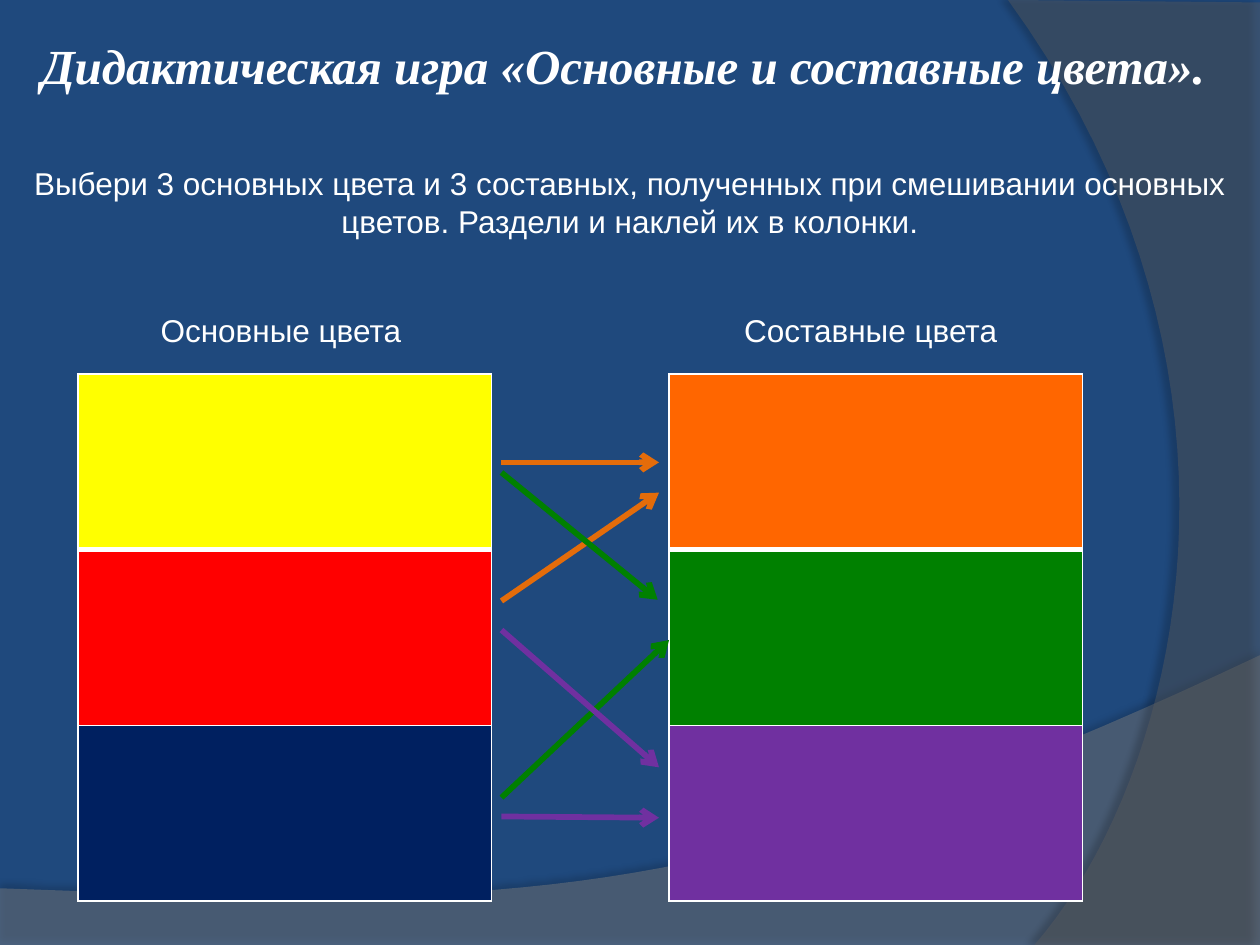
import pptx
import pptx.util
import pptx.dml.color
import pptx.enum.shapes
import pptx.enum.text
import pptx.oxml
import pptx.oxml.ns

NS = pptx.oxml.ns.nsdecls("a")
WHITE, ORANGE, GREEN, PURPLE = "FFFFFF", "E46C0A", "008000", "7030A0"
ALIGN = pptx.enum.text.PP_ALIGN

deck = pptx.Presentation()
deck.slide_width = pptx.util.Inches(10)
deck.slide_height = pptx.util.Inches(7.5)
slide = deck.slides.add_slide(deck.slide_layouts[6])

# Grid of 100 columns by 75 rows, with square cells
UNIT = deck.slide_width // 100


def colour(fmt, code):
    """Give a fill a solid colour."""
    fmt.solid()
    fmt.fore_color.rgb = pptx.dml.color.RGBColor.from_string(code)


def write(text, left, top, width, height, size=18, font="Arial", align=ALIGN.CENTER):
    """Place white text on the grid and return its frame."""
    box = slide.shapes.add_textbox(*(round(n * UNIT) for n in (left, top, width, height)))
    frame = box.text_frame
    frame.word_wrap = True
    line = frame.paragraphs[0]
    line.text = text
    line.alignment = align
    line.font.size = pptx.util.Pt(size)
    line.font.name = font
    colour(line.font.fill, WHITE)
    return frame


# Background with two translucent waves:
# straight corners, curve controls, fill, opacity, shadow opacity, distance, angle
colour(slide.background.fill, "1F497D")
waves = [
    ([(0, 70.5), (0, 75.1), (100, 75.1), (100, 52)],
     [(55.9, 72.9), (39.1, 71.9), (0, 70.5)], "7F7F7F", 45, 35, 3.5, 270),
    ([(100, 0.2), (100, 75), (82.1, 75)],
     [(93.5, 61.9), (101.8, 30), (80, 0)], "5E5E5E", 40, 45, 4, 180),
]
STEPS = 40
for corners, controls, fill, opacity, shade, distance, angle in waves:
    bezier = [corners[-1]] + controls
    curve = []
    for step in range(1, STEPS + 1):
        t = step / STEPS
        weights = ((1 - t) ** 3, 3 * t * (1 - t) ** 2, 3 * t * t * (1 - t), t ** 3)
        curve.append(tuple(sum(w * p[axis] for w, p in zip(weights, bezier))
                           for axis in (0, 1)))
    outline = [(round(x * UNIT), round(y * UNIT)) for x, y in corners + curve]
    builder = slide.shapes.build_freeform(*outline[0])
    builder.add_line_segments(outline[1:], close=True)
    wave = builder.convert_to_shape()
    wave.line.fill.background()
    colour(wave.fill, fill)
    wave.shadow.inherit = False
    props = wave.element.spPr
    props.find(".//" + pptx.oxml.ns.qn("a:srgbClr")).append(
        pptx.oxml.parse_xml(f'<a:alpha {NS} val="{opacity * 1000}"/>'))
    props.find(pptx.oxml.ns.qn("a:effectLst")).append(pptx.oxml.parse_xml(
        f'<a:outerShdw {NS} blurRad="{pptx.util.Pt(4)}" dist="{pptx.util.Pt(distance)}" '
        f'dir="{angle * 60000}" algn="ctr" rotWithShape="0"><a:srgbClr val="000000">'
        f'<a:alpha val="{shade * 1000}"/></a:srgbClr></a:outerShdw>'))

# Title and task
title = write("Дидактическая игра «Основные и составные цвета».",
              2.3, 2.3, 95.4, 5.7, 28, "Times New Roman", ALIGN.JUSTIFY)
title.word_wrap = False
title.vertical_anchor = pptx.enum.text.MSO_ANCHOR.MIDDLE
title.paragraphs[0].font.bold = True
title.paragraphs[0].font.italic = True
write("Выбери 3 основных цвета и 3 составных, полученных при смешивании основных "
      "цветов. Раздели и наклей их в колонки.", 0, 12.5, 100, 7.1)

# Two colour columns with their headings
columns = [
    ("Основные цвета", 5.5, 6.2, ("FFFF00", "FF0000", "002060")),
    ("Составные цвета", 52.3, 53.1, ("FF6600", GREEN, PURPLE)),
]
for heading, heading_left, left, swatches in columns:
    write(heading, heading_left, 24.2, 33.6, 4)
    table = slide.shapes.add_table(
        3, 1, *(round(n * UNIT) for n in (left, 29.7, 32.8, 41.8))).table
    for row, swatch in enumerate(swatches):
        cell = table.cell(row, 0)
        widths = {"L": 1, "R": 1, "T": 3 if row == 1 else 1, "B": 3 if row == 0 else 1}
        for side, width in widths.items():
            cell._tc.get_or_add_tcPr().append(pptx.oxml.parse_xml(
                f'<a:ln{side} {NS} w="{pptx.util.Pt(width)}"><a:solidFill>'
                f'<a:srgbClr val="{WHITE}"/></a:solidFill></a:ln{side}>'))
        colour(cell.fill, swatch)

# Mixing arrows: start row, end column, end row
ARROW_START = 39.8
arrows = [
    (ORANGE, 36.7, 52.3, 36.7),
    (ORANGE, 47.7, 52.3, 39.1),
    (GREEN, 37.5, 52.2, 47.6),
    (GREEN, 63.3, 53.1, 50.8),
    (PURPLE, 50, 52.3, 60.9),
    (PURPLE, 64.8, 52.3, 64.9),
]
for mix, start_row, end_column, end_row in arrows:
    arrow = slide.shapes.add_connector(
        pptx.enum.shapes.MSO_CONNECTOR.STRAIGHT,
        *(round(n * UNIT) for n in (ARROW_START, start_row, end_column, end_row)))
    colour(arrow.line.fill, mix)
    arrow.line.width = pptx.util.Pt(3.25)
    arrow.line._get_or_add_ln().append(
        pptx.oxml.parse_xml(f'<a:tailEnd {NS} type="arrow"/>'))
    arrow.element.spPr.append(pptx.oxml.parse_xml(f"<a:effectLst {NS}/>"))

deck.save("out.pptx")
